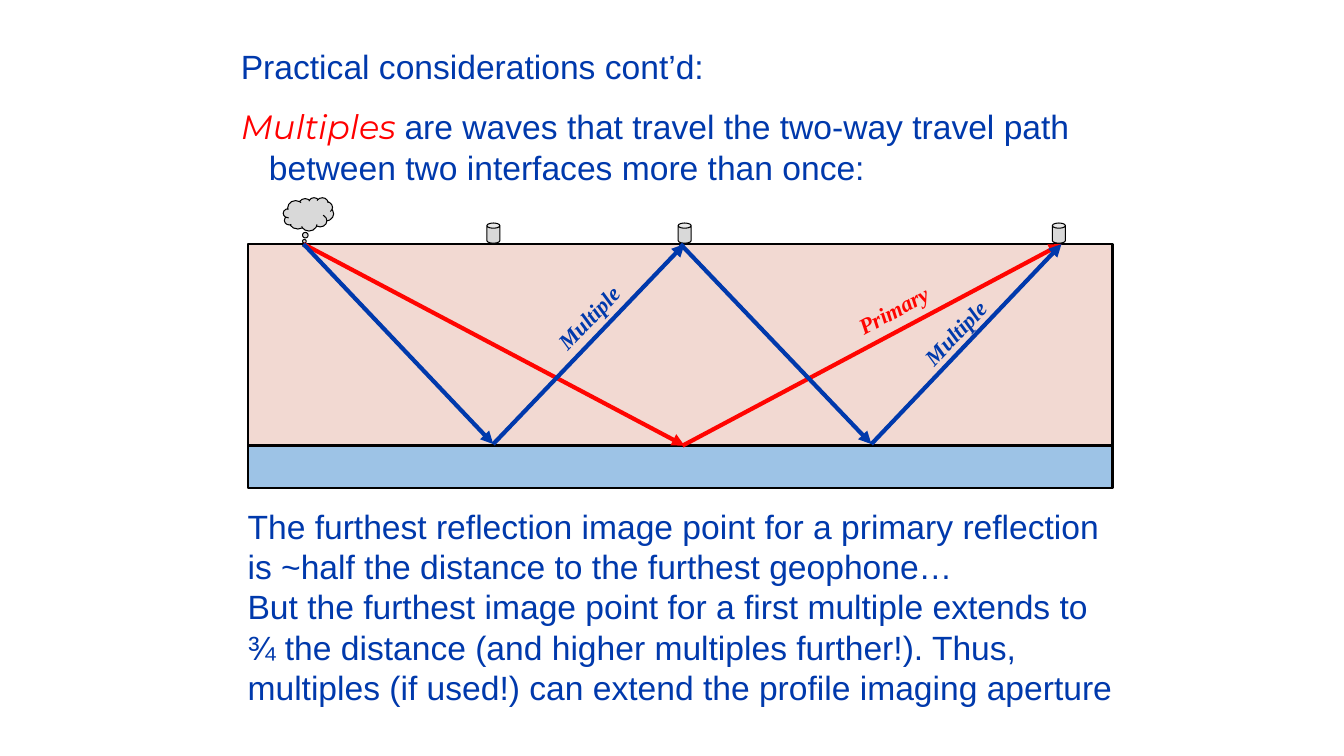
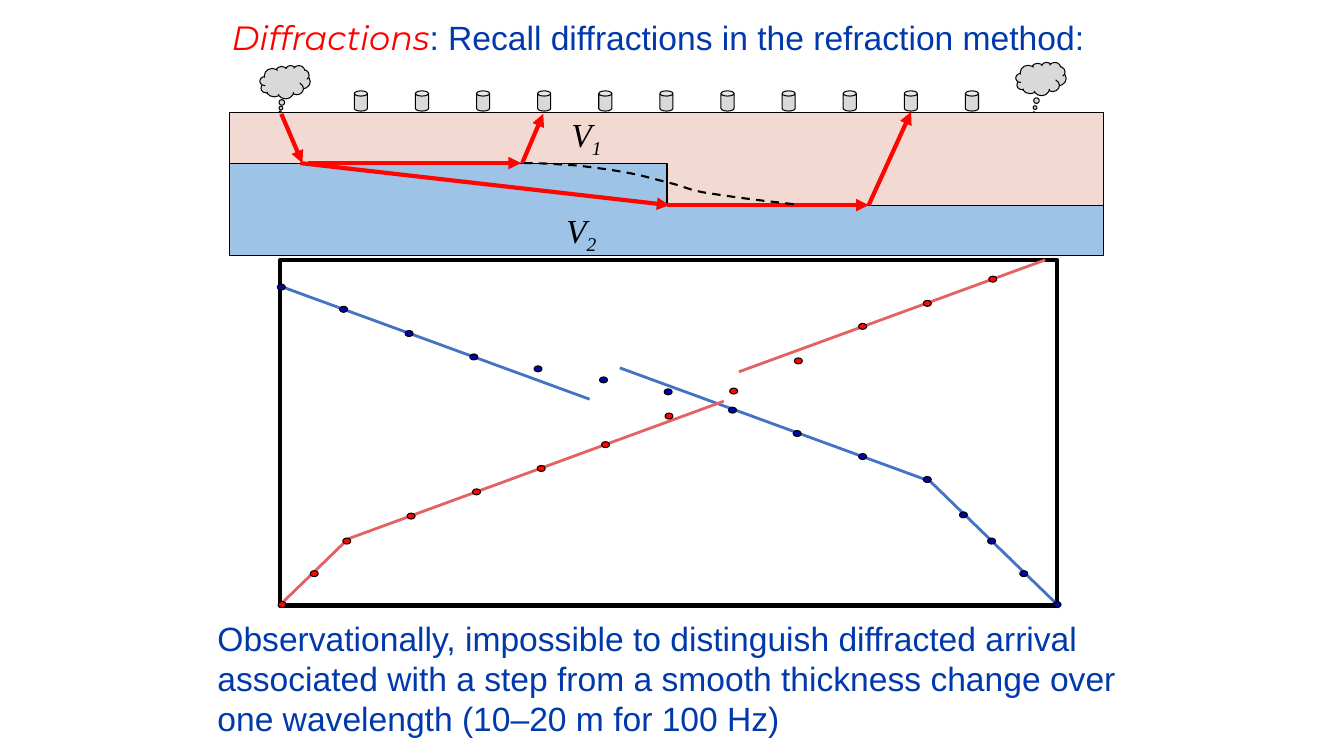
from dataclasses import dataclass

from lxml import etree
from pptx import Presentation
from pptx.dml.color import RGBColor
from pptx.enum.dml import MSO_LINE
from pptx.enum.shapes import MSO_CONNECTOR, MSO_SHAPE
from pptx.enum.text import MSO_AUTO_SIZE
from pptx.oxml.ns import qn
from pptx.util import Cm, Pt

RECT = MSO_SHAPE.RECTANGLE
CAN = MSO_SHAPE.CAN
CLOUD = MSO_SHAPE.CLOUD_CALLOUT
OVAL = MSO_SHAPE.OVAL
STRAIGHT = MSO_CONNECTOR.STRAIGHT
DASH = MSO_LINE.DASH
FIT = MSO_AUTO_SIZE.SHAPE_TO_FIT_TEXT


@dataclass(frozen=True)
class Theme:
    blue: str = "0039AC"
    term_red: str = "FF0000"
    ray_red: str = "FF0501"
    black: str = "000000"
    rock: str = "F2D9D2"
    bedrock: str = "9DC3E6"
    device: str = "D9D9D9"
    blue_fit: str = "4472C4"
    red_fit: str = "E36262"
    blue_dot: str = "0003AA"
    sans: str = "Arial"
    accent: str = "Montserrat"
    serif: str = "Times New Roman"
    body_size: int = 24
    label_size: int = 16
    thin: float = 0.75
    dashed: float = 1.5
    medium: float = 2
    thick: float = 3


T = Theme()
LABEL = {"name": T.serif, "size": Pt(T.label_size), "bold": True, "italic": True}
FORMATS = {
    "body": (T.blue, {"name": T.sans, "size": Pt(T.body_size)}),
    "term": (T.term_red, {"name": T.accent, "size": Pt(T.body_size), "italic": True}),
    "symbol": (T.black, {"name": T.serif, "size": Pt(T.body_size), "italic": True}),
    "primary": (T.ray_red, LABEL),
    "multiple": (T.blue, LABEL),
}


class Deck:
    def __init__(self):
        self.prs = Presentation()
        self.prs.slide_width, self.prs.slide_height = Cm(33.87), Cm(19.05)
        self.s = None

    def slide(self):
        self.s = self.prs.slides.add_slide(self.prs.slide_layouts[6])

    def outline(self, line, color, width):
        line.color.rgb = RGBColor.from_string(color)
        line.width = Pt(width)

    def paint(self, sp, fill, width):
        sp.shadow.inherit = False
        if fill:
            sp.fill.solid()
            sp.fill.fore_color.rgb = RGBColor.from_string(fill)
        else:
            sp.fill.background()
        self.outline(sp.line, T.black, width)

    def shape(self, kind, x, y, w, h, fill=None, width=T.thin, adj=()):
        sp = self.s.shapes.add_shape(kind, Cm(x), Cm(y), Cm(w), Cm(h))
        for i, value in enumerate(adj):
            sp.adjustments[i] = value
        self.paint(sp, fill, width)

    def freeform(self, points, fill=None, width=T.thin, close=True, dash=None):
        start, *rest = [(Cm(x), Cm(y)) for x, y in points]
        builder = self.s.shapes.build_freeform(*start)
        builder.add_line_segments(rest, close=close)
        sp = builder.convert_to_shape()
        self.paint(sp, fill, width)
        sp.line.dash_style = dash

    def line(self, x1, y1, x2, y2, color, width=T.medium, arrow=False):
        sp = self.s.shapes.add_connector(STRAIGHT, Cm(x1), Cm(y1), Cm(x2), Cm(y2))
        self.outline(sp.line, color, width)
        if arrow:
            etree.SubElement(sp.line._get_or_add_ln(), qn("a:tailEnd"), type="triangle")
        etree.SubElement(sp._element.spPr, qn("a:effectLst"))

    def ray(self, x1, y1, x2, y2, color=T.ray_red):
        self.line(x1, y1, x2, y2, color, T.thick, arrow=True)

    def geophone(self, x, y):
        self.shape(CAN, x, y, 0.33, 0.51, T.device, adj=(0.4,))

    def shot(self, x, y, tail_x, tail_y):
        self.shape(CLOUD, x, y, 1.27, 0.84, T.device, adj=(tail_x, tail_y))

    def dots(self, points, color):
        for x, y in points:
            self.shape(OVAL, x, y, 0.2, 0.15, color)

    def text(self, x, y, w, h, paragraphs, rotation=0):
        sp = self.s.shapes.add_textbox(Cm(x), Cm(y), Cm(w), Cm(h))
        sp.rotation = rotation
        tf = sp.text_frame
        tf.word_wrap = False
        tf.auto_size = FIT
        for i, runs in enumerate(paragraphs):
            p = tf.add_paragraph() if i else tf.paragraphs[0]
            for content, style in runs:
                r = p.add_run()
                r.text = content
                color, values = FORMATS[style]
                for name, value in values.items():
                    setattr(r.font, name, value)
                r.font.color.rgb = RGBColor.from_string(color)
        return tf

    def body(self, x, y, w, h, lines):
        return self.text(x, y, w, h, [[(line, "body")] for line in lines])

    def symbol(self, x, y, letter, index):
        tf = self.text(x, y, 1.32, 1.27, [[(letter, "symbol"), (index, "symbol")]])
        tf.paragraphs[0].runs[1].font._element.set("baseline", "-25000")


def bezier(points, steps=6):
    curve = [points[0]]
    for i in range(0, len(points) - 1, 3):
        a, b, c, d = points[i:i + 4]
        for k in range(1, steps + 1):
            t = k / steps
            u = 1 - t
            weights = (u ** 3, 3 * u * u * t, 3 * u * t * t, t ** 3)
            curve.append(tuple(sum(m * q[axis] for m, q in zip(weights, (a, b, c, d)))
                               for axis in (0, 1)))
    return curve


def multiples(deck):
    deck.slide()
    tf = deck.text(5.82, 1.04, 22, 3.84, [
        [("Practical considerations cont’d:", "body")],
        [("Multiples ", "term"), ("are waves that travel the two-way travel path", "body")],
        [("between two interfaces more than once:", "body")],
    ])
    tf.paragraphs[1].space_before = Pt(14)
    tf.paragraphs[2]._p.get_or_add_pPr().set("marL", str(Cm(0.71)))

    left, surface, width, depth = 6.25, 6.15, 21.79, 5.08
    interface = surface + depth
    deck.shape(RECT, left, surface, width, depth, T.rock, T.medium)
    deck.shape(RECT, left, interface, width, 1.07, T.bedrock, T.medium)
    deck.shot(7.14, 4.98, -0.094, 0.943)
    for x in (12.27, 17.09, 26.52):
        deck.geophone(x, 5.62)

    deck.ray(7.65, surface, 17.25, interface)
    deck.ray(17.2, interface, 26.75, surface)
    bounce = interface - 0.04
    for down, bottom, up in ((7.65, 12.43, 17.25), (17.15, 21.96, 26.75)):
        deck.ray(down, surface, bottom, bounce, T.blue)
        deck.ray(bottom, bounce, up, surface, T.blue)

    deck.text(21.31, 7.34, 2.41, 0.94, [[("Primary", "primary")]], 331.8)
    for x, y in ((13.59, 7.52), (22.83, 7.9)):
        deck.text(x, y, 2.51, 0.94, [[("Multiple", "multiple")]], 313.7)
    deck.body(5.99, 12.62, 22.53, 5.38, [
        "The furthest reflection image point for a primary reflection",
        "is ~half the distance to the furthest geophone…",
        "But the furthest image point for a first multiple extends to",
        "¾ the distance (and higher multiples further!). Thus,",
        "multiples (if used!) can extend the profile imaging aperture",
    ])


def diffractions(deck):
    deck.slide()
    deck.shot(6.55, 1.65, -0.094, 0.891)
    for i in range(11):
        deck.geophone(8.93 + 1.54 * i, 2.29)
    deck.shot(25.6, 1.57, -0.139, 1.016)

    left, step, right = 5.79, 16.81, 27.81
    surface, upper, lower, base = 2.84, 4.11, 5.17, 6.43
    deck.shape(RECT, left, surface, right - left, lower - surface, T.rock)
    deck.symbol(14.15, 2.74, "V", "1")
    deck.freeform([(left, upper), (step, upper), (step, lower), (right, lower),
                   (right, base), (left, base)], T.bedrock)
    deck.symbol(14.02, 5.16, "V", "2")
    deck.text(5.59, 0.3, 22.73, 1.27, [[
        ("Diffractions", "term"),
        (": Recall diffractions in the refraction method:", "body"),
    ]])
    for ray in (
        (7.09, 2.87, 7.62, upper), (7.75, upper, 13.13, upper),
        (13.16, upper, 13.69, 2.87), (7.57, upper, 16.87, lower),
        (step, lower, 21.89, lower), (21.89, lower, 22.96, 2.82),
    ):
        deck.ray(*ray)

    deck.shape(RECT, 7.06, 6.55, 19.58, 8.71, width=T.thick)
    fits = {
        T.blue_fit: ((26.62, 15.21, 23.32, 12.01), (23.42, 12.12, 15.62, 9.27),
                     (14.86, 10.06, 7.06, 7.21)),
        T.red_fit: ((7.06, 15.24, 8.71, 13.64), (8.74, 13.59, 18.24, 10.11),
                    (18.62, 9.37, 26.34, 6.55)),
    }
    for color, segments in fits.items():
        for segment in segments:
            deck.line(*segment, color)
    deck.dots([
        (7.01, 15.16), (7.82, 14.38), (8.64, 13.56), (10.26, 12.93), (11.91, 12.32),
        (13.54, 11.73), (15.16, 11.13), (16.76, 10.41), (18.39, 9.78), (20.02, 9.02),
        (21.64, 8.15), (23.27, 7.57), (24.92, 6.96),
    ], T.ray_red)
    deck.dots([
        (6.99, 7.16), (8.56, 7.72), (10.21, 8.33), (11.84, 8.92), (13.46, 9.22),
        (15.11, 9.5), (16.74, 9.8), (18.36, 10.26), (19.99, 10.85), (21.64, 11.43),
        (23.27, 12.01), (24.18, 12.9), (24.89, 13.56), (25.7, 14.38), (26.54, 15.16),
    ], T.blue_dot)

    deck.body(5.23, 15.44, 23.37, 3.33, [
        "Observationally, impossible to distinguish diffracted arrival",
        "associated with a step from a smooth thickness change over",
        "one wavelength (10–20 m for 100 Hz)",
    ])
    smooth_change = bezier([
        (13.21, 4.11), (13.64, 4.11), (14.07, 4.14), (14.53, 4.17), (14.96, 4.22),
        (15.49, 4.29), (15.9, 4.37), (16.31, 4.45), (16.61, 4.55), (16.92, 4.62),
        (17.22, 4.7), (17.37, 4.78), (17.73, 4.85), (18.06, 4.9), (18.59, 4.98),
        (19, 5.03), (19.38, 5.08), (19.91, 5.13), (20.09, 5.16),
    ])
    deck.freeform(smooth_change, width=T.dashed, close=False, dash=DASH)


def main():
    deck = Deck()
    multiples(deck)
    diffractions(deck)
    deck.prs.save("out.pptx")


if __name__ == "__main__":
    main()
